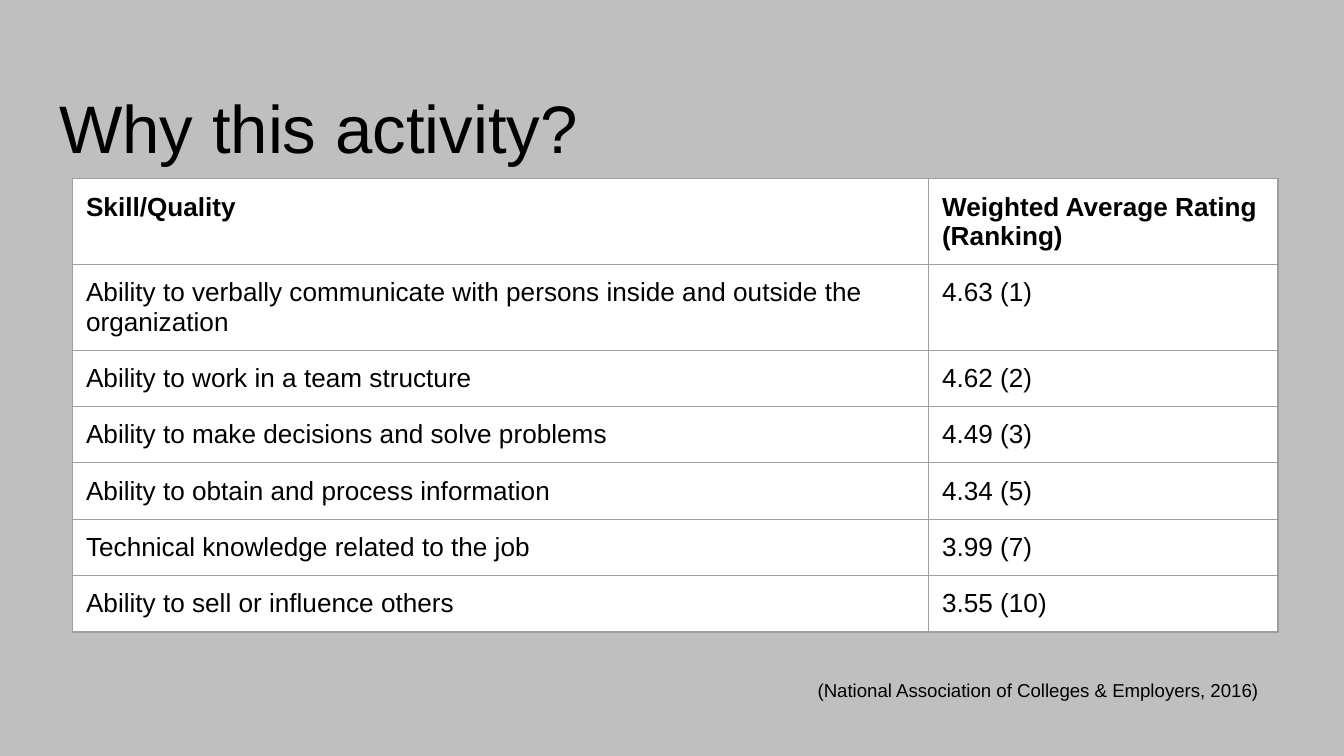
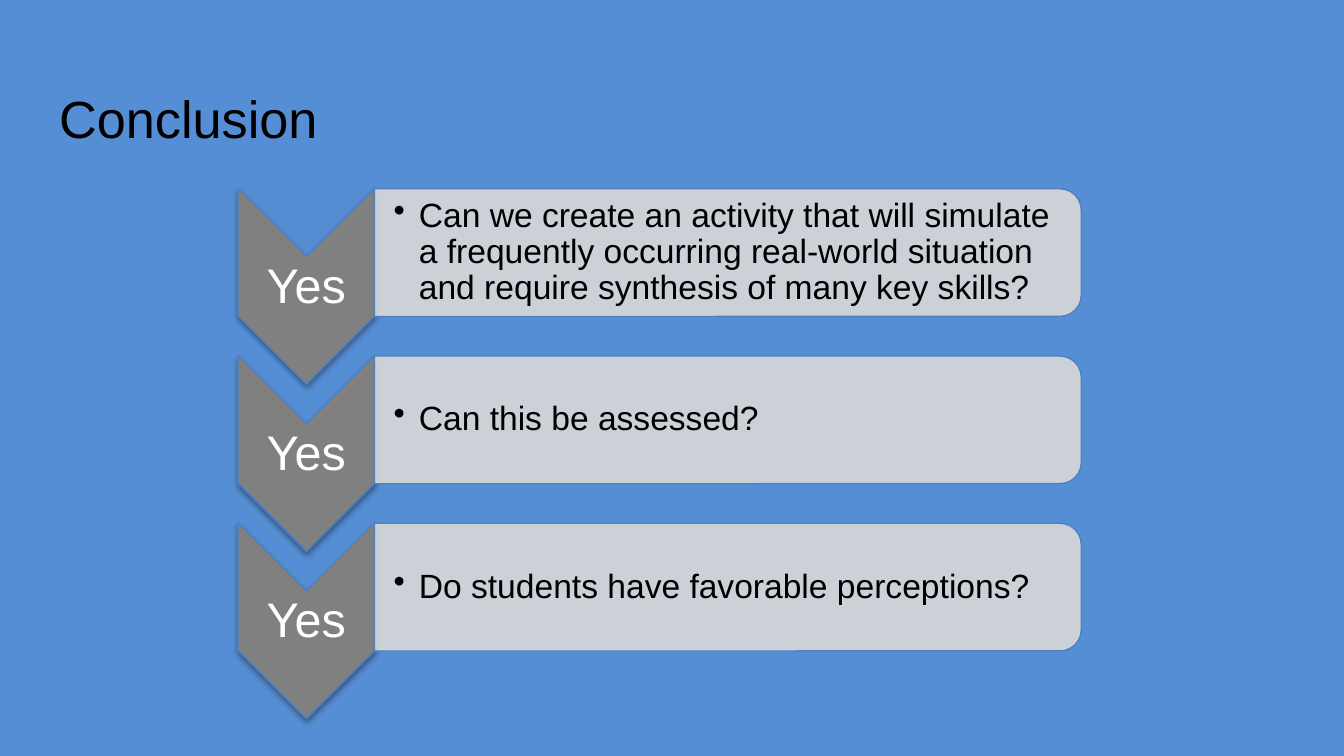
"""Builds the two slides on why the activity is run and what was concluded."""
from dataclasses import dataclass

import lxml.etree
import pptx
import pptx.dml.color
import pptx.enum.dml
import pptx.enum.shapes
import pptx.enum.text
import pptx.oxml.ns
import pptx.util

Pt = pptx.util.Pt
qn = pptx.oxml.ns.qn
Shapes = pptx.enum.shapes.MSO_SHAPE
Anchor = pptx.enum.text.MSO_ANCHOR
Align = pptx.enum.text.PP_ALIGN

FONT = "Arial"
COLOURS = {
    "grey_ground": "BFBFBF",
    "blue_ground": "558ED5",
    "ink": "000000",
    "paper": "FFFFFF",
    "grid": "9E9E9E",
    "chevron": "808080",
    "bar": "D9D9D9",
    "outline": "4F81BD",
}
INSET = 7.2
STEP_PITCH = 89.6

RATINGS = [
    ("Skill/Quality", "Weighted Average Rating (Ranking)"),
    ("Ability to verbally communicate with persons inside and outside the organization", "4.63 (1)"),
    ("Ability to work in a team structure", "4.62 (2)"),
    ("Ability to make decisions and solve problems", "4.49 (3)"),
    ("Ability to obtain and process information", "4.34 (5)"),
    ("Technical knowledge related to the job", "3.99 (7)"),
    ("Ability to sell or influence others", "3.55 (10)"),
]


@dataclass(frozen=True)
class Box:
    left: float
    top: float
    width: float
    height: float

    def lowered(self, distance: float) -> "Box":
        return Box(self.left, self.top + distance, self.width, self.height)

    def lengths(self) -> tuple:
        return tuple(Pt(v) for v in (self.left, self.top, self.width, self.height))


@dataclass(frozen=True)
class Step:
    answer: str
    question: str


STEPS = [
    Step("Yes", "Can we create an activity that will simulate a frequently occurring "
                "real-world situation and require synthesis of many key skills?"),
    Step("Yes", "Can this be assessed?"),
    Step("Yes", "Do students have favorable perceptions?"),
]
TITLE = Box(24.5, 35.3, 671, 45.4)
TABLE = Box(38.9, 95.8, 645.8, 212)
CITATION = Box(414, 357.8, 270.7, 18.7)
CHEVRON = Box(111.6, 116.6, 105.1, 73.4)
ANSWER = Box(127.4, 138.2, 73.4, 31.7)
BAR = Box(355.7, -54, 68.4, 378.7)
QUESTION = Box(200.9, 104.4, 375.1, 61.9)


def rgb(name: str) -> pptx.dml.color.RGBColor:
    return pptx.dml.color.RGBColor.from_string(COLOURS[name])


def add_xml(parent, tag: str, **attributes: str):
    return lxml.etree.SubElement(parent, qn(tag), attributes)


def write(frame, text: str, size: float, colour: str = "ink", bold: bool = False):
    frame.text = text
    paragraph = frame.paragraphs[0]
    for run in paragraph.runs:
        run.font.name = FONT
        run.font.size = Pt(size)
        run.font.bold = bold
        run.font.color.rgb = rgb(colour)
    return paragraph


def set_insets(target, left: float, top: float, right: float, bottom: float) -> None:
    target.margin_left, target.margin_top = Pt(left), Pt(top)
    target.margin_right, target.margin_bottom = Pt(right), Pt(bottom)


def add_titled_slide(deck, title: str, size: float, ground: str):
    slide = deck.slides.add_slide(deck.slide_layouts[5])
    slide.background.fill.solid()
    slide.background.fill.fore_color.rgb = rgb(ground)
    heading = slide.shapes.title
    heading.left, heading.top, heading.width, heading.height = TITLE.lengths()
    frame = heading.text_frame
    frame.auto_size = pptx.enum.text.MSO_AUTO_SIZE.NONE
    frame.vertical_anchor = Anchor.TOP
    set_insets(frame, INSET, 11, INSET, INSET)
    write(frame, title, size).alignment = Align.LEFT
    return slide


def add_text(slide, box: Box, insets: tuple, anchor, text: str, size: float, colour: str = "ink"):
    frame = slide.shapes.add_textbox(*box.lengths()).text_frame
    frame.word_wrap = True
    frame.vertical_anchor = anchor
    set_insets(frame, *insets)
    return write(frame, text, size, colour)


def add_turned_shape(slide, kind, box: Box, fill: str):
    shape = slide.shapes.add_shape(kind, *box.lengths())
    shape.rotation = 90
    shape.shadow.inherit = False
    shape.fill.solid()
    shape.fill.fore_color.rgb = rgb(fill)
    shape.line.color.rgb = rgb("outline")
    shape.line.width = Pt(0.75)
    return shape


def border_cell(cell) -> None:
    properties = cell._tc.get_or_add_tcPr()
    for position, side in enumerate(("a:lnL", "a:lnR", "a:lnT", "a:lnB")):
        line = lxml.etree.Element(qn(side), w=str(Pt(0.75)))
        add_xml(add_xml(line, "a:solidFill"), "a:srgbClr", val=COLOURS["grid"])
        properties.insert(position, line)


def add_ratings(slide) -> None:
    table = slide.shapes.add_table(len(RATINGS), 2, *TABLE.lengths()).table
    for column, width in zip(table.columns, (458.6, 187.2)):
        column.width = Pt(width)
    for index, (row, texts) in enumerate(zip(table.rows, RATINGS)):
        row.height = Pt(30.2)
        for cell, text in zip(row.cells, texts):
            set_insets(cell, INSET, INSET, INSET, INSET)
            cell.fill.solid()
            cell.fill.fore_color.rgb = rgb("paper")
            border_cell(cell)
            write(cell.text_frame, text, 14, bold=index == 0)


def add_step(slide, step: Step, drop: float) -> None:
    chevron = add_turned_shape(slide, Shapes.CHEVRON, CHEVRON.lowered(drop), "chevron")
    effects = chevron._element.spPr.find(qn("a:effectLst"))
    shadow = add_xml(effects, "a:outerShdw", blurRad=str(Pt(3.1)), dist=str(Pt(1.8)),
                     dir="5400000", rotWithShape="0")
    add_xml(add_xml(shadow, "a:srgbClr", val=COLOURS["ink"]), "a:alpha", val="35000")

    answer = add_text(slide, ANSWER.lowered(drop), (1.3,) * 4, Anchor.MIDDLE, step.answer, 26, "paper")
    answer.alignment = Align.CENTER
    answer.line_spacing = 0.9

    bar = add_turned_shape(slide, Shapes.ROUND_2_SAME_RECTANGLE, BAR.lowered(drop), "bar")
    bar_colour = bar._element.spPr.find(qn("a:solidFill")).find(qn("a:srgbClr"))
    add_xml(bar_colour, "a:alpha", val="90000")

    question = add_text(slide, QUESTION.lowered(drop), (10, 0.9, 0.9, 0.9), Anchor.MIDDLE,
                        step.question, 18)
    question.level = 1
    question.line_spacing = 0.9
    properties = question._p.get_or_add_pPr()
    properties.set("marL", str(Pt(13.5)))
    properties.set("indent", str(Pt(-13.5)))
    add_xml(properties, "a:buChar", char="•")


def main() -> None:
    deck = pptx.Presentation()
    deck.slide_width, deck.slide_height = Pt(720), Pt(405)

    reasons = add_titled_slide(deck, "Why this activity?", 36, "grey_ground")
    add_ratings(reasons)
    add_text(reasons, CITATION, (24, INSET, INSET, INSET), Anchor.TOP,
             "(National Association of Colleges & Employers, 2016)", 10)

    conclusion = add_titled_slide(deck, "Conclusion", 28, "blue_ground")
    for index, step in enumerate(STEPS):
        add_step(conclusion, step, index * STEP_PITCH)

    deck.save("out.pptx")


if __name__ == "__main__":
    main()
